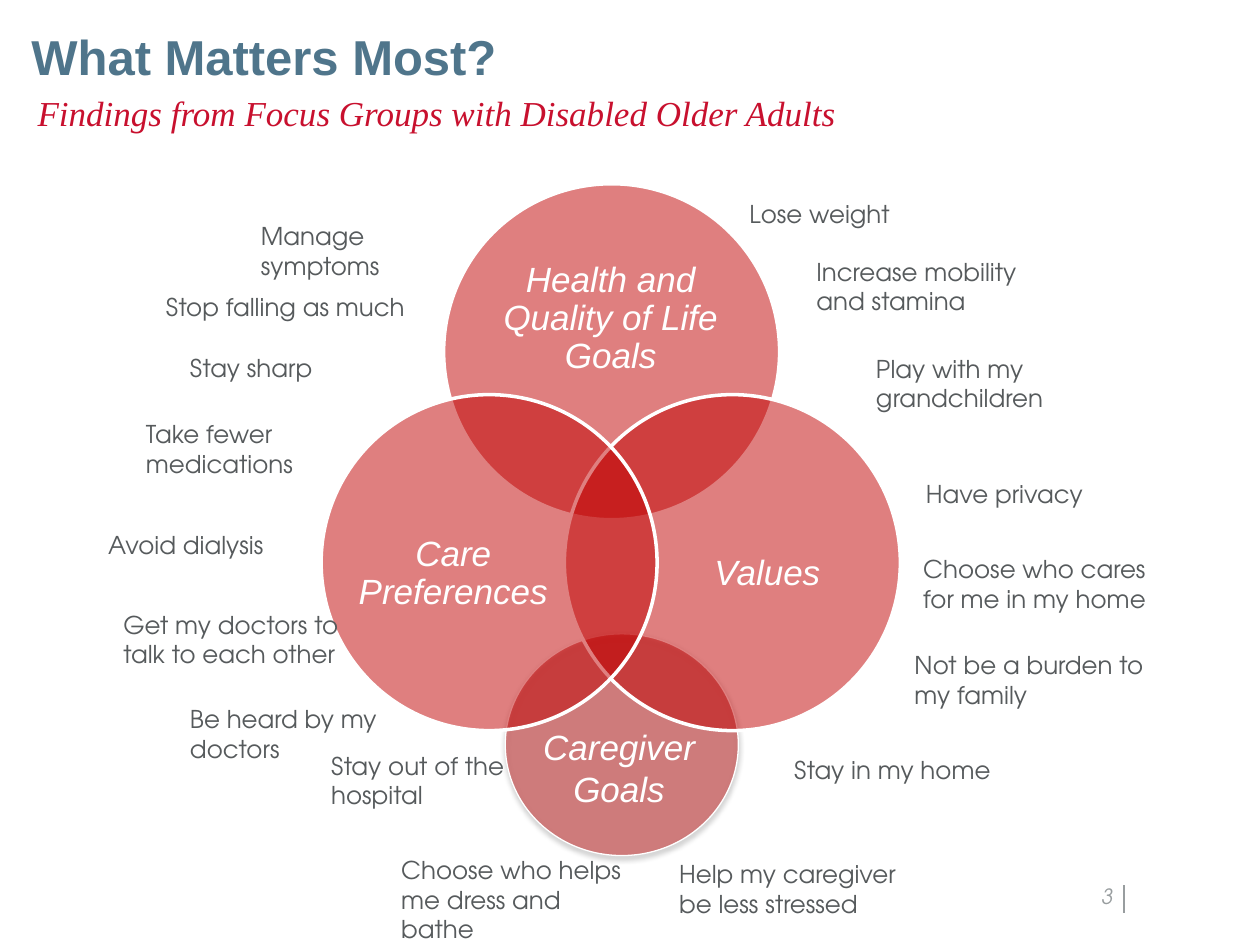
from lxml.etree import SubElement
from pptx import Presentation
from pptx.dml.color import RGBColor
from pptx.enum.shapes import MSO_CONNECTOR, MSO_SHAPE
from pptx.enum.text import MSO_ANCHOR, MSO_AUTO_SIZE, PP_ALIGN
from pptx.oxml.ns import qn
from pptx.util import Pt

WHITE = RGBColor(0xFF, 0xFF, 0xFF)
BLACK = RGBColor(0x00, 0x00, 0x00)
DARK_RED = RGBColor(0xC0, 0x00, 0x00)
CRIMSON = RGBColor(0xC8, 0x10, 0x2E)
SLATE_BLUE = RGBColor(0x4F, 0x75, 0x8B)
GRAY = RGBColor(0x56, 0x5A, 0x5C)
LIGHT_GRAY = RGBColor(0x98, 0x9D, 0x9F)

DIAMETER = 192
LABEL_HEIGHT = 106
CIRCLES = [  # text, circle left and top, label left, top, width and height
    ("Health and Quality of Life Goals", (253.5, 105), (278.5, 139, 141, 86.5)),
    ("Values", (322.5, 225.5), (381, 275, 115, LABEL_HEIGHT)),
    ("Care Preferences", (183.5, 225.5), (201.5, 275, 115, LABEL_HEIGHT)),
]

NOTE_WIDTH = 150
NOTES = [  # text, left, top, number of lines
    ("Manage symptoms", 142, 123, 2),
    ("Stop falling as much", 87.8, 163.5, 1),
    ("Stay sharp", 101.5, 198, 1),
    ("Take fewer medications", 76.3, 236, 2),
    ("Avoid dialysis", 54.7, 299.5, 1),
    ("Get my doctors to talk to each other", 63.4, 345, 2),
    ("Be heard by my doctors", 101.5, 399, 2),
    ("Stay out of the hospital", 182.2, 425.5, 2),
    ("Choose who helps me dress and bathe", 222.2, 485.3, 3),
    ("Lose weight", 421.2, 110, 1),
    ("Increase mobility and stamina", 459.4, 143.3, 2),
    ("Play with my grandchildren", 493.5, 198.7, 2),
    ("Have privacy", 522, 270, 1),
    ("Choose who cares for me in my home", 520.5, 313.2, 2),
    ("Not be a burden to my family", 515.5, 368, 2),
    ("Stay in my home", 446.8, 427.7, 1),
    ("Help my caregiver be less stressed", 381, 487.5, 2),
]


def set_text(frame, text, font="TeX Gyre Adventor", size=14, color=GRAY, bold=False,
             italic=False, align=PP_ALIGN.LEFT, spacing=None, before=None, after=None):
    paragraph = frame.paragraphs[0]
    paragraph.alignment = align
    paragraph.line_spacing = spacing
    paragraph.space_before = before
    paragraph.space_after = after
    run = paragraph.add_run()
    run.text = text
    run.font.name = font
    run.font.size = Pt(size)
    run.font.bold = bold
    run.font.italic = italic
    run.font.color.rgb = color


def add_alpha(color_element, percent):
    SubElement(color_element, qn("a:alpha"), val=str(percent * 1000))


class SlideBuilder:
    circle_text = dict(font="Arial", size=20, color=WHITE, italic=True,
                       align=PP_ALIGN.CENTER)

    def __init__(self, presentation):
        self.slide = presentation.slides.add_slide(presentation.slide_layouts[6])

    def text(self, text, left, top, width, height, margins=(0, 0, 0, 0),
             anchor=MSO_ANCHOR.TOP, grow=False, **style):
        shape = self.slide.shapes.add_textbox(Pt(left), Pt(top), Pt(width), Pt(height))
        frame = shape.text_frame
        frame.word_wrap = True
        frame.vertical_anchor = anchor
        if grow:
            frame.auto_size = MSO_AUTO_SIZE.SHAPE_TO_FIT_TEXT
        (frame.margin_left, frame.margin_top,
         frame.margin_right, frame.margin_bottom) = map(Pt, margins)
        set_text(frame, text, **style)

    def note(self, text, left, top, width, height, **style):
        self.text(text, left, top, width, height, margins=(7.2, 3.6, 7.2, 3.6),
                  grow=True, **style)

    def circle(self, left, top, width, height, opacity, line_width):
        shape = self.slide.shapes.add_shape(
            MSO_SHAPE.OVAL, Pt(left), Pt(top), Pt(width), Pt(height))
        shape.shadow.inherit = False
        shape.fill.solid()
        shape.fill.fore_color.rgb = DARK_RED
        add_alpha(shape._element.spPr.find(qn("a:solidFill"))[0], opacity)
        shape.line.color.rgb = WHITE
        shape.line.width = Pt(line_width)
        return shape

    def drop_shadow(self, shape):
        effects = shape._element.spPr.find(qn("a:effectLst"))
        shadow = SubElement(effects, qn("a:outerShdw"), blurRad=str(Pt(3.1)),
                            dist=str(Pt(1.8)), dir=str(90 * 60000), rotWithShape="0")
        add_alpha(SubElement(shadow, qn("a:srgbClr"), val=str(BLACK)), 35)

    def line(self, start_x, start_y, end_x, end_y):
        connector = self.slide.shapes.add_connector(
            MSO_CONNECTOR.STRAIGHT, Pt(start_x), Pt(start_y), Pt(end_x), Pt(end_y))
        connector.line.color.rgb = LIGHT_GRAY
        connector.line.width = Pt(1)
        SubElement(connector._element.spPr, qn("a:effectLst"))


def main():
    presentation = Presentation()
    presentation.slide_width, presentation.slide_height = Pt(720), Pt(540)
    builder = SlideBuilder(presentation)

    # Page number
    builder.line(642.5, 506, 642.5, 521.5)
    builder.text("3", 593.5, 506, 42.5, 13, anchor=MSO_ANCHOR.BOTTOM, size=12,
                 color=LIGHT_GRAY, italic=True, align=PP_ALIGN.RIGHT)

    # Headings
    builder.text("What Matters Most?", 18, 18.7, 684, 29.5, margins=(0, 0, 7.2, 0),
                 font="Arial", size=28, color=SLATE_BLUE, bold=True, spacing=0.9)
    builder.text("Findings from Focus Groups with Disabled Older Adults",
                 21.5, 54.7, 684, 26, font="Times New Roman", size=20, color=CRIMSON,
                 italic=True, spacing=0.9, before=Pt(0), after=Pt(6))

    # Overlapping circles
    caregiver = builder.circle(288.7, 362.2, 133.2, 126.7, 43, 0.75)
    builder.drop_shadow(caregiver)
    for text, position, label_box in CIRCLES:
        builder.circle(*position, DIAMETER, DIAMETER, 50, 2)
        builder.text(text, *label_box, anchor=MSO_ANCHOR.MIDDLE, spacing=0.9,
                     after=Pt(7), **builder.circle_text)
    builder.note("Caregiver Goals", 299, 411, 109.5, 55.5, **builder.circle_text)

    # Notes around the circles
    for text, left, top, lines in NOTES:
        width = 164 if text == "Stop falling as much" else NOTE_WIDTH
        width = 143 if text == "Manage symptoms" else width
        builder.note(text, left, top, width, 7.2 + 17 * lines)

    presentation.save("out.pptx")


if __name__ == "__main__":
    main()
